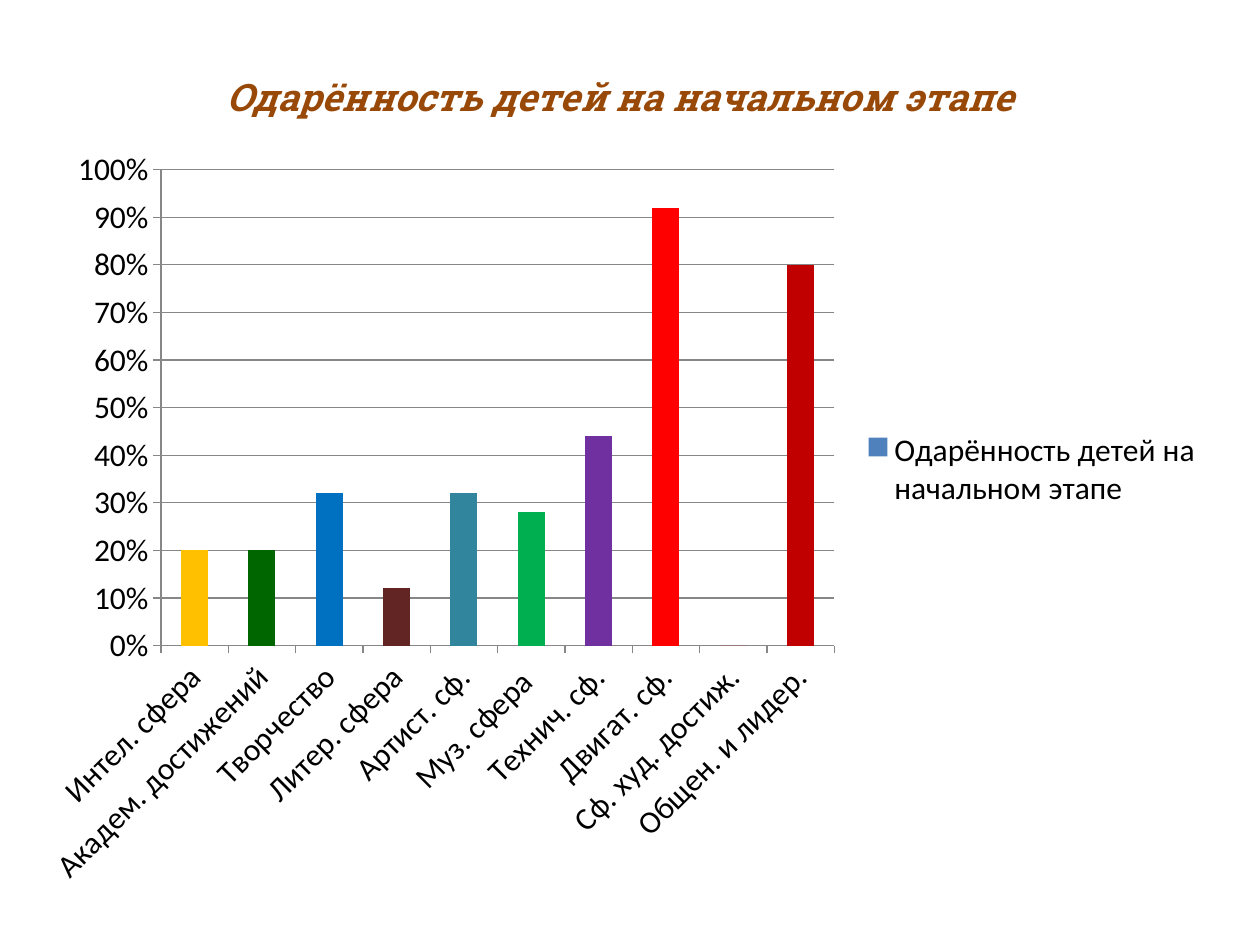
import pptx
import pptx.chart.data
import pptx.dml.color
import pptx.enum.chart
import pptx.util

# Content
HEADING = "Одарённость детей на начальном этапе"
COLORS = {
    "heading": "984807", "text": "000000", "series": "4F81BD", "grid": "878787",
    "amber": "FFC000", "forest": "006600", "blue": "0070C0", "maroon": "632523",
    "teal": "31859C", "green": "00B050", "purple": "7030A0", "red": "FF0000",
    "crimson": "C00000",
}
SPHERES = [
    ("Интел. сфера", 0.20, "amber"),
    ("Академ. достижений", 0.20, "forest"),
    ("Творчество", 0.32, "blue"),
    ("Литер. сфера", 0.12, "maroon"),
    ("Артист. сф.", 0.32, "teal"),
    ("Муз. сфера ", 0.28, "green"),
    ("Технич. сф.", 0.44, "purple"),
    ("Двигат. сф.", 0.92, "red"),
    ("Сф. худ. достиж.", 0, "red"),
    ("Общен. и лидер.", 0.80, "crimson"),
]


def rgb(name):
    return pptx.dml.color.RGBColor.from_string(COLORS[name])


def paint(fill, name):
    fill.solid()
    fill.fore_color.rgb = rgb(name)


deck = pptx.Presentation()
deck.slide_width = pptx.util.Inches(10)
deck.slide_height = pptx.util.Inches(7.5)
slide = deck.slides.add_slide(deck.slide_layouts[6])

# Column chart of giftedness by sphere
spheres = pptx.chart.data.CategoryChartData(number_format="0%")
spheres.categories = [label for label, _, _ in SPHERES]
spheres.add_series(HEADING, [share for _, share, _ in SPHERES])
chart = slide.shapes.add_chart(
    pptx.enum.chart.XL_CHART_TYPE.COLUMN_STACKED,
    *(pptx.util.Inches(side) for side in (0.2, 0.29, 9.45, 6.87)),
    spheres,
).chart
chart.font.name = "Calibri"
chart.font.size = pptx.util.Pt(18)
chart.font.color.rgb = rgb("text")

# Heading
chart.has_title = True
chart.chart_title.include_in_layout = False
heading = chart.chart_title.text_frame.paragraphs[0].add_run()
heading.text = HEADING
heading.font.name = "Roboto Slab"
heading.font.size = pptx.util.Pt(21.6)
heading.font.bold = True
heading.font.italic = True
heading.font.color.rgb = rgb("heading")

# Legend
chart.has_legend = True
chart.legend.position = pptx.enum.chart.XL_LEGEND_POSITION.RIGHT
chart.legend.include_in_layout = False

# Axes
shares = chart.value_axis
shares.minimum_scale, shares.maximum_scale, shares.major_unit = 0, 1, 0.1
shares.tick_labels.number_format = "0%"
shares.tick_labels.number_format_is_linked = False
shares.has_major_gridlines = True
for axis in (chart.category_axis, shares):
    axis.major_tick_mark = pptx.enum.chart.XL_TICK_MARK.OUTSIDE
    axis.minor_tick_mark = pptx.enum.chart.XL_TICK_MARK.NONE
for line in (chart.category_axis.format.line, shares.format.line,
             shares.major_gridlines.format.line):
    line.color.rgb = rgb("grid")
    line.width = pptx.util.Pt(0.75)

# Columns, one colour for each sphere
plot = chart.plots[0]
plot.gap_width = 150
plot.overlap = 100
plot.vary_by_categories = False
giftedness = plot.series[0]
giftedness.invert_if_negative = False
paint(giftedness.format.fill, "series")
for index, (_, _, color) in enumerate(SPHERES):
    paint(giftedness.points[index].format.fill, color)

deck.save("out.pptx")
